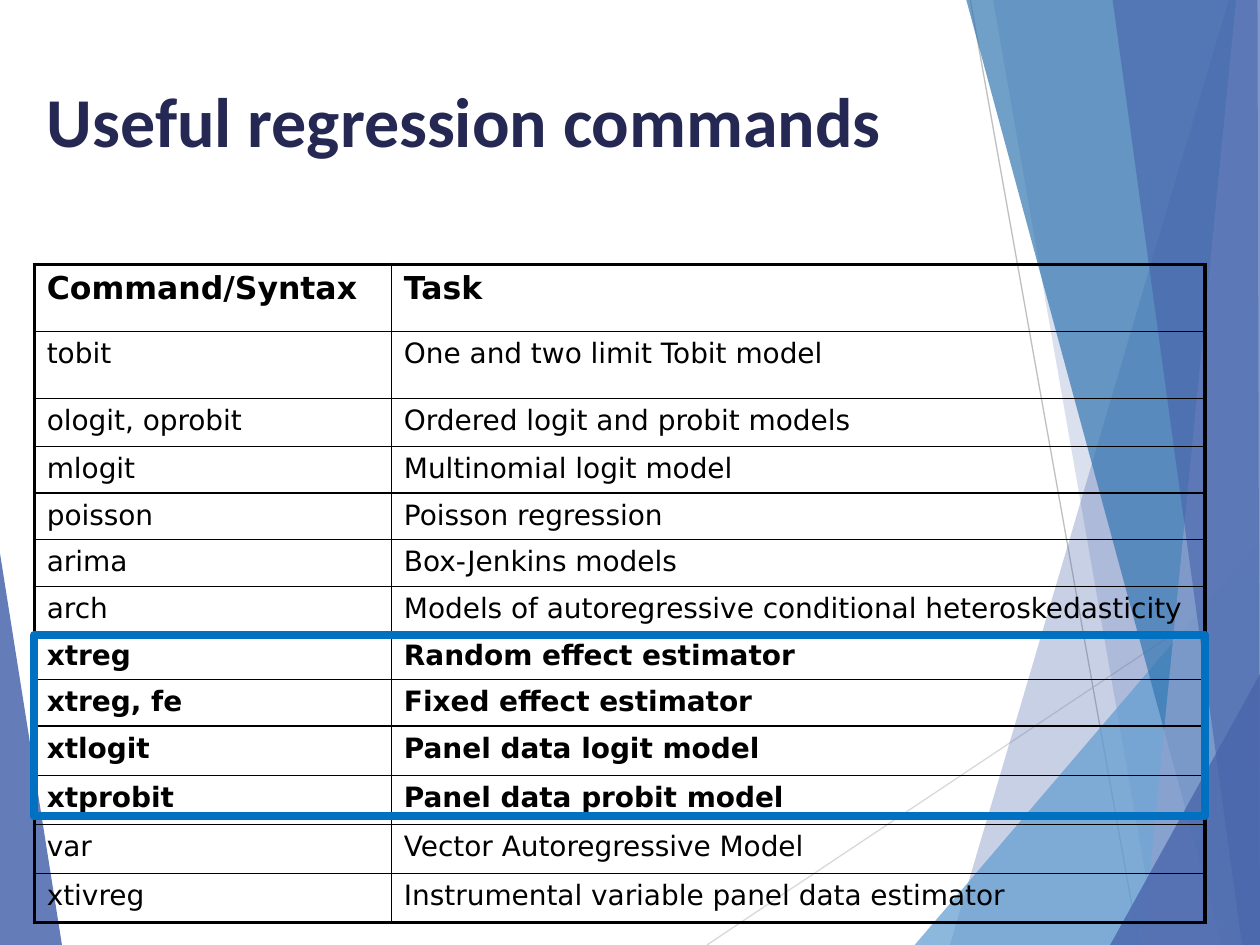
from lxml import etree
from pptx import Presentation
from pptx.dml.color import RGBColor
from pptx.enum import shapes, text
from pptx.oxml import ns
from pptx.util import Cm, Pt

COLORS = {
    "title": "242852", "ink": "000000", "frame": "0070C0",
    "indigo": "4A66AC", "sky": "629DD1", "blue": "3477B2", "lilac": "90A2CF",
    "pale": "D9D9D9", "grey": "BFBFBF",
}
W, H = 25.4, 19.05
LEFT, TABLE_TOP, TABLE_W = 0.69, 5.33, 23.6
COL_WIDTHS = [7.2, 16.4]
ROW_HEIGHTS = [1.35] * 2 + [0.97] + [0.94] * 6 + [0.99] * 4
THIN, THICK = 1, 2.25

ROWS = [
    ("Command/Syntax", "Task"),
    ("tobit", "One and two limit Tobit model"),
    ("ologit, oprobit", "Ordered logit and probit models"),
    ("mlogit", "Multinomial logit model"),
    ("poisson", "Poisson regression"),
    ("arima", "Box-Jenkins models"),
    ("arch", "Models of autoregressive conditional heteroskedasticity"),
    ("xtreg", "Random effect estimator"),
    ("xtreg, fe", "Fixed effect estimator"),
    ("xtlogit", "Panel data logit model"),
    ("xtprobit", "Panel data probit model"),
    ("var", "Vector Autoregressive Model"),
    ("xtivreg", "Instrumental variable panel data estimator"),
]
PANEL_ROWS = range(7, 11)

LEFT_FACET = ([(0, 11.15), (1.25, H), (0, H)], "indigo", 85)
RAYS = [
    ((14.25, H), (W, 11.61), "pale"),
    ((19.56, 0), (22.96, H), "grey"),
]
RIGHT_FACETS = [
    ([(24.77, 0), (19.15, H), (W, H), (W, 0)], "indigo", 30),
    ([(20.02, 0), (23.34, H), (W, H), (W, 0)], "indigo", 20),
    ([(18.44, H), (W, 10.9), (W, H)], "sky", 72),
    ([(19.48, 0), (24.64, H), (W, H), (W, 0)], "blue", 70),
    ([(24.92, 0), (23.04, H), (W, H), (W, 0)], "lilac", 70),
    ([(22.43, 0), (25.04, H), (W, H), (25.35, 0)], "indigo", 65),
    ([(22.38, H), (W, 13.59), (W, H)], "indigo", 80),
]


def rgb(name):
    return RGBColor.from_string(COLORS[name])


def write(tf, content, size=16, font="DejaVu Sans", color="ink", bold=False):
    p = tf.paragraphs[0]
    p.alignment = text.PP_ALIGN.LEFT
    r = p.add_run()
    r.text = content
    r.font.size, r.font.name, r.font.bold = Pt(size), font, bold
    r.font.color.rgb = rgb(color)


def add_facet(s, points, color, opacity):
    points = [(Cm(x), Cm(y)) for x, y in points]
    builder = s.shapes.build_freeform(*points[0])
    builder.add_line_segments(points[1:], close=True)
    sp = builder.convert_to_shape()
    sp.shadow.inherit = False
    sp.line.fill.background()
    sp.fill.solid()
    sp.fill.fore_color.rgb = rgb(color)
    clr = sp.element.spPr.find(".//" + ns.qn("a:srgbClr"))
    etree.SubElement(clr, ns.qn("a:alpha"), val=str(opacity * 1000))


def add_ray(s, start, end, color):
    ends = [Cm(v) for v in start + end]
    line = s.shapes.add_connector(shapes.MSO_CONNECTOR.STRAIGHT, *ends)
    line.line.color.rgb = rgb(color)
    line.line.width = Pt(0.75)
    etree.SubElement(line.element.spPr, ns.qn("a:effectLst"))


def add_title(s, content):
    sp = s.shapes.title
    sp.left, sp.top, sp.width, sp.height = Cm(LEFT), Cm(1.42), Cm(TABLE_W), Cm(1.96)
    tf = sp.text_frame
    tf.word_wrap = True
    tf.auto_size = text.MSO_AUTO_SIZE.SHAPE_TO_FIT_TEXT
    tf.vertical_anchor = text.MSO_ANCHOR.BOTTOM
    write(tf, content, size=40, font="Calibri", color="title", bold=True)
    sp.element.getparent().append(sp.element)


def set_borders(cell, **widths):
    tcPr = cell._tc.get_or_add_tcPr()
    for i, (side, width) in enumerate(widths.items()):
        ln = etree.Element(ns.qn("a:ln" + side), w=str(Pt(width)))
        fill = etree.SubElement(ln, ns.qn("a:solidFill"))
        etree.SubElement(fill, ns.qn("a:srgbClr"), val=COLORS["ink"])
        tcPr.insert(i, ln)


def add_command_table(s):
    table = s.shapes.add_table(
        len(ROWS), len(COL_WIDTHS), Cm(LEFT), Cm(TABLE_TOP),
        Cm(TABLE_W), Cm(sum(ROW_HEIGHTS))).table
    table.first_row = table.horz_banding = False
    for column, width in zip(table.columns, COL_WIDTHS):
        column.width = Cm(width)
    for i, (row, height) in enumerate(zip(table.rows, ROW_HEIGHTS)):
        row.height = Cm(height)
        for j, cell in enumerate(row.cells):
            cell.fill.background()
            set_borders(
                cell,
                L=THICK if j == 0 else THIN,
                R=THICK if j == len(COL_WIDTHS) - 1 else THIN,
                T=THICK if i == 0 else THIN,
                B=THICK if i == len(ROWS) - 1 else THIN)
            write(cell.text_frame, ROWS[i][j], size=18 if i == 0 else 16,
                  bold=i == 0 or i in PANEL_ROWS)


def add_panel_frame(s):
    sp = s.shapes.add_shape(shapes.MSO_SHAPE.RECTANGLE, Cm(LEFT), Cm(12.8),
                            Cm(TABLE_W), Cm(3.66))
    sp.shadow.inherit = False
    sp.fill.background()
    sp.line.color.rgb = rgb("frame")
    sp.line.width = Pt(4.5)


def main():
    prs = Presentation()
    prs.slide_width, prs.slide_height = Cm(W), Cm(H)
    s = prs.slides.add_slide(prs.slide_layouts[5])
    add_facet(s, *LEFT_FACET)
    for ray in RAYS:
        add_ray(s, *ray)
    for facet in RIGHT_FACETS:
        add_facet(s, *facet)
    add_title(s, "Useful regression commands")
    add_command_table(s)
    add_panel_frame(s)
    prs.save("out.pptx")


if __name__ == "__main__":
    main()
